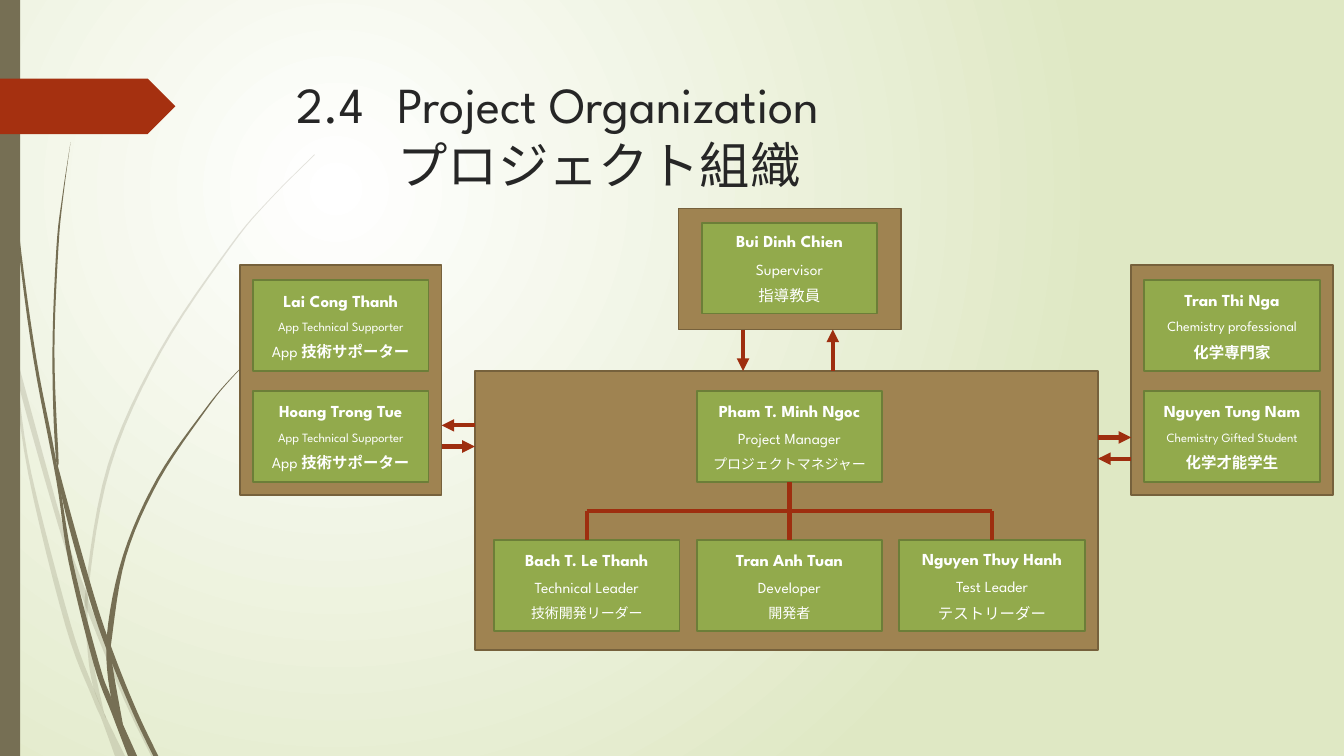
import pptx
import pptx.util
import pptx.dml.color
import pptx.enum.shapes
import pptx.enum.text
import pptx.oxml
import pptx.oxml.ns

Inches = pptx.util.Inches
Pt = pptx.util.Pt
RGBColor = pptx.dml.color.RGBColor
SHAPE = pptx.enum.shapes.MSO_SHAPE
ANCHOR = pptx.enum.text.MSO_ANCHOR
ALIGN = pptx.enum.text.PP_ALIGN
qn = pptx.oxml.ns.qn

WHITE = RGBColor(0xFF, 0xFF, 0xFF)
PALE_GREEN = RGBColor(0xDF, 0xE8, 0xC4)
OLIVE = RGBColor(0x76, 0x6F, 0x54)
RED = RGBColor(0xA5, 0x30, 0x10)
DARK_RED = RGBColor(0x9E, 0x2E, 0x0F)
BROWN = RGBColor(0x9F, 0x83, 0x51)
DARK_BROWN = RGBColor(0x76, 0x61, 0x3C)
GREEN = RGBColor(0x92, 0xAA, 0x4C)
DARK_GREEN = RGBColor(0x6C, 0x7E, 0x38)
INK = RGBColor(0x26, 0x26, 0x26)
FONT = "League Spartan"

LIGHT_WISPS = [
    ([(0, 2.99), (.1, 3.44), (.28, 4.7), (.65, 6.21), (.92, 6.93), (1.01, 7.14), (1.14, 7.5)],
     [(0, 2.82), (.09, 3.22), (.17, 3.76), (.31, 4.69), (.7, 6.19), (.93, 6.83), (1.05, 7.11), (1.24, 7.5)]),
    ([(.14, 3.45), (.17, 3.76), (.58, 5.22), (.84, 5.99), (1.23, 6.94), (1.5, 7.5)],
     [(.14, 3.45), (.62, 5.2), (.85, 5.86), (.92, 6.07), (1.27, 6.92), (1.55, 7.5)]),
    ([(3.12, 1.53), (2.68, 1.97), (2.28, 2.44), (1.58, 3.48), (1.07, 4.61), (.85, 5.84),
      (.87, 6.46), (.93, 6.83), (1.05, 7.11)],
     [(3.12, 1.54), (2.68, 1.98), (2.29, 2.45), (1.6, 3.49), (1.1, 4.62), (.88, 5.84),
      (.91, 6.46), (1.03, 7.06), (1.05, 7.11)]),
]
DARK_WISPS = [
    ([(.03, 0), (.07, 1.1), (.17, 2.33), (.33, 3.55), (.56, 4.77), (.68, 5.57), (.93, 6.59),
      (1.11, 7.08), (1.27, 7.5)],
     [(.04, 0), (.08, 1.09), (.19, 2.32), (.36, 3.55), (.55, 4.53), (.72, 5.56), (.98, 6.57),
      (1.1, 6.91), (1.36, 7.5)]),
    ([(.7, 1.41), (.62, 1.93), (.56, 2.45), (.52, 3.49), (.55, 4.49), (.64, 5.05), (.88, 5.92),
      (1.06, 6.45), (1.32, 7.08), (1.52, 7.5)],
     [(.7, 1.41), (.63, 1.93), (.58, 2.45), (.54, 3.49), (.58, 4.53), (.6, 4.72), (.93, 5.9),
      (1.13, 6.49), (1.36, 7.06), (1.57, 7.5)]),
    ([(2.6, 3.44), (2.31, 3.73), (2.04, 4.05), (1.56, 4.74), (1.22, 5.51), (1.06, 6.31),
      (1.1, 6.91), (1.22, 7.19)],
     [(2.61, 3.44), (2.31, 3.74), (2.05, 4.06), (1.58, 4.76), (1.25, 5.52), (1.11, 6.33),
      (1.11, 6.56), (1.22, 7.19)]),
]


def add_text(p, text, size=11, color=WHITE, bold=False, font=FONT):
    r = p.add_run()
    r.text = text
    r.font.size = Pt(size)
    r.font.color.rgb = color
    r.font.bold = bold
    r.font.name = font
    return r


def smooth(points, steps=6):
    ends = [points[0]] + points + [points[-1]]
    curve = []
    for a, b, c, d in zip(ends, ends[1:], ends[2:], ends[3:]):
        for t in (i / steps for i in range(steps)):
            curve.append(tuple(
                (2 * q + (r - p) * t + (2 * p - 5 * q + 4 * r - s) * t ** 2
                 + (3 * q - p - 3 * r + s) * t ** 3) / 2
                for p, q, r, s in zip(a, b, c, d)))
    return curve + [points[-1]]


class OrgSlide:
    def __init__(self, prs):
        self.s = prs.slides.add_slide(prs.slide_layouts[5])
        self.shapes = self.s.shapes

    def background(self):
        fill = self.s.background.fill
        fill.gradient()
        for stop, color, position in zip(fill.gradient_stops, (WHITE, PALE_GREEN), (0, 1)):
            stop.color.rgb = color
            stop.position = position
        grad = self.s._element.find(".//" + qn("a:gradFill"))
        grad.replace(grad.find(qn("a:lin")), pptx.oxml.parse_xml(
            '<a:path xmlns:a="http://schemas.openxmlformats.org/drawingml/2006/main" path="circle">'
            '<a:fillToRect l="50000" t="50000" r="100000" b="100000"/></a:path>'))

    def style(self, sp, fill, line=None):
        sp.shadow.inherit = False
        sp.fill.solid()
        sp.fill.fore_color.rgb = fill
        if line is None:
            sp.line.fill.background()
        else:
            sp.line.color.rgb = line
            sp.line.width = Pt(1.25)
        return sp

    def wisp(self, left, right, alpha=None):
        outline = [(Inches(x), Inches(y)) for x, y in smooth(left) + smooth(right)[::-1]]
        builder = self.shapes.build_freeform(*outline[0])
        builder.add_line_segments(outline[1:], close=True)
        sp = self.style(builder.convert_to_shape(), OLIVE)
        if alpha:
            color = sp._element.spPr.find(qn("a:solidFill"))[0]
            color.append(color.makeelement(qn("a:alpha"), {"val": str(alpha * 1000)}))

    def box(self, x, y, w, h, fill=BROWN, line=DARK_BROWN, kind=SHAPE.RECTANGLE):
        sp = self.shapes.add_shape(kind, Inches(x), Inches(y), Inches(w), Inches(h))
        return self.style(sp, fill, line)

    def card(self, x, y, w, name, role, *japanese, role_size=11, size=11, bold=False):
        sp = self.box(x, y, w, 0.9, GREEN, DARK_GREEN)
        tf = sp.text_frame
        tf.word_wrap = True
        tf.vertical_anchor = ANCHOR.MIDDLE
        lines = [[(name, 12, True)], [(role, role_size, False)],
                 [(text, size, bold and text != "App") for text in japanese]]
        for i, runs in enumerate(lines):
            p = tf.add_paragraph() if i else tf.paragraphs[0]
            p.alignment = ALIGN.CENTER
            p.space_before = p.space_after = Pt(3)
            for text, points, strong in runs:
                add_text(p, text, size=points, bold=strong)
        return sp

    def link(self, x1, y1, x2, y2, arrow=False, begin=None, end=None):
        c = self.shapes.add_connector(pptx.enum.shapes.MSO_CONNECTOR.STRAIGHT,
                                      Inches(x1), Inches(y1), Inches(x2), Inches(y2))
        if begin:
            c.begin_connect(*begin)
        if end:
            c.end_connect(*end)
        c.line.color.rgb = DARK_RED
        c.line.width = Pt(3)
        if arrow:
            ln = c.line._get_or_add_ln()
            ln.append(ln.makeelement(qn("a:tailEnd"), {"type": "triangle"}))
        spPr = c._element.spPr
        spPr.append(spPr.makeelement(qn("a:effectLst")))

    def title(self, first, second):
        sp = self.shapes.title
        sp.left, sp.top, sp.width, sp.height = Inches(2.84), Inches(0.68), Inches(9.75), Inches(1.4)
        tf = sp.text_frame
        tf.word_wrap = True
        tf.vertical_anchor = ANCHOR.TOP
        p = tf.paragraphs[0]
        p.alignment = ALIGN.LEFT
        add_text(p, first, size=36, color=INK)
        p.add_line_break()
        add_text(p, second, size=36, color=INK)
        pPr = p._p.get_or_add_pPr()
        tabs = pPr.makeelement(qn("a:tabLst"))
        for stop in (0.5, 1):
            tabs.append(tabs.makeelement(qn("a:tab"), {"pos": str(Inches(stop)), "algn": "l"}))
        pPr.append(tabs)


def main():
    prs = pptx.Presentation()
    prs.slide_width, prs.slide_height = Inches(13.33), Inches(7.5)
    org = OrgSlide(prs)
    org.background()
    for left, right in LIGHT_WISPS:
        org.wisp(left, right, alpha=20)
    for left, right in DARK_WISPS:
        org.wisp(left, right)
    org.box(0, 0, 0.2, 7.5, OLIVE, None)
    org.box(0, 0.78, 1.74, 0.55, RED, None, SHAPE.PENTAGON)
    org.title("2.4 \tProject Organization", "\t\tプロジェクト組織")

    for x in (11.22, 2.38):
        org.box(x, 2.63, 2, 2.28)
    org.box(6.73, 2.07, 2.21, 1.2)
    org.box(4.71, 3.68, 6.18, 2.77)

    for y, name in ((2.78, "Lai Cong Thanh"), (3.88, "Hoang Trong Tue")):
        org.card(2.51, y, 1.74, name, "App Technical Supporter", "App", "技術サポーター",
                 role_size=9, bold=True)
    org.card(11.35, 2.78, 1.74, "Tran Thi Nga", "Chemistry professional", "化学専門家",
             role_size=10, bold=True)
    org.card(11.35, 3.88, 1.74, "Nguyen Tung Nam", "Chemistry Gifted Student", "化学才能学生",
             role_size=9, bold=True)
    org.card(6.96, 2.21, 1.74, "Bui Dinh Chien", "Supervisor", "指導教員")
    manager = org.card(6.91, 3.88, 1.84, "Pham T. Minh Ngoc", "Project Manager",
                       "プロジェクトマネジャー", size=10)
    team = [("Bach T. Le Thanh", "Technical Leader", "技術開発リーダー", 10),
            ("Tran Anh Tuan", "Developer", "開発者", 10),
            ("Nguyen Thuy Hanh", "Test Leader", "テストリーダー", 11)]
    technical, developer, tester = [
        org.card(4.9 + 2.01 * i, 5.36, 1.84, name, role, japanese, size=size)
        for i, (name, role, japanese, size) in enumerate(team)]

    org.link(7.83, 4.78, 7.83, 5.36, begin=(manager, 2), end=(developer, 0))
    for x, leader in ((5.82, technical), (9.84, tester)):
        org.link(x, 5.36, x, 5.07, begin=(leader, 0))
    org.link(5.82, 5.07, 9.84, 5.07)
    for ends in ((7.37, 3.27, 7.37, 3.68), (8.26, 3.68, 8.26, 3.27),
                 (4.38, 4.43, 4.71, 4.43), (4.71, 4.22, 4.38, 4.22),
                 (11.22, 4.55, 10.89, 4.55), (10.89, 4.34, 11.22, 4.34)):
        org.link(*ends, arrow=True)
    prs.save("out.pptx")


if __name__ == "__main__":
    main()
